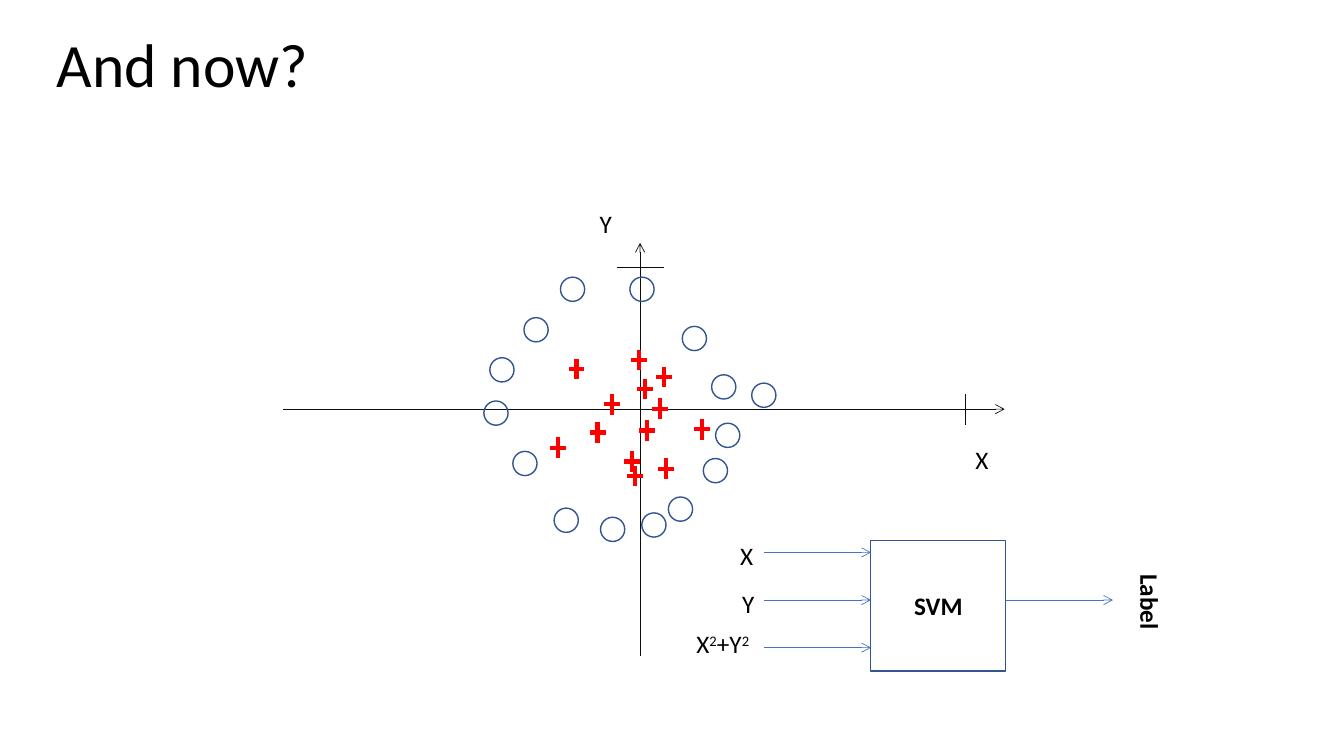
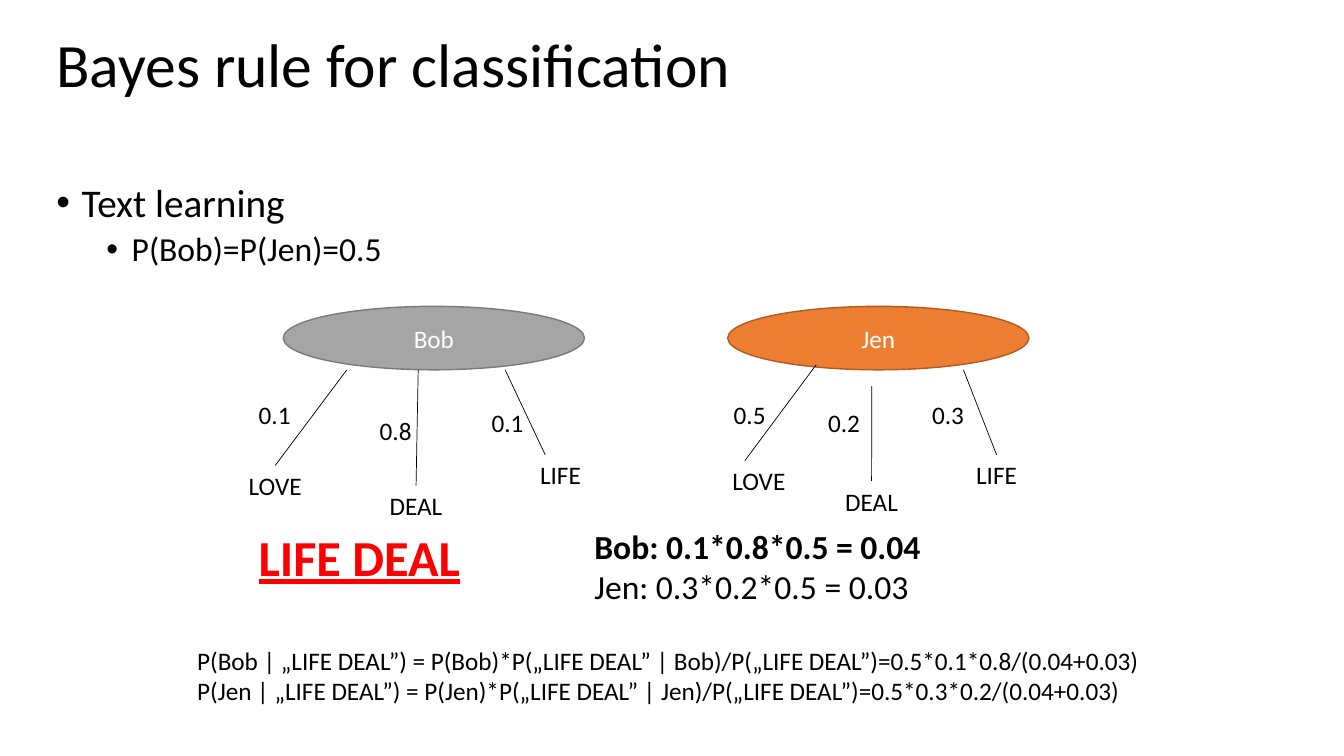
from lxml import etree
from pptx import Presentation
from pptx.dml.color import RGBColor
from pptx.enum.shapes import MSO_CONNECTOR as LINK, MSO_SHAPE as SHAPE
from pptx.enum.text import MSO_ANCHOR as ANCHOR, PP_ALIGN as ALIGN
from pptx.oxml.ns import qn
from pptx.util import Cm, Pt

FONT = "Calibri"
COLORS = {
    "ink": "000000",
    "axis": "0D0D0D",
    "red": "FF0000",
    "outline": "325491",
    "arrow": "4472C4",
    "white": "FFFFFF",
    "gray": "A5A5A5",
    "gray_edge": "7A7A7A",
    "orange": "ED7D31",
    "orange_edge": "AF5C24",
}

PLUSES = [
    (16.64, 10.3), (15.93, 11.63), (14.07, 11.28), (17.7, 10.82), (16.1, 9.07),
    (16.79, 11.81), (14.53, 9.3), (15.42, 10.19), (15.06, 10.9), (16.26, 9.8),
    (16.31, 10.85), (16.74, 9.5), (16, 11.99),
]
CIRCLES = [
    (16.18, 7.29), (12.65, 9.32), (14.43, 7.29), (17.15, 12.83), (18.24, 9.75),
    (14.27, 13.11), (13.23, 11.68), (17.5, 8.53), (18.03, 11.86), (12.5, 10.41),
    (13.51, 8.31), (19.25, 9.96), (18.34, 10.97), (16.48, 13.23), (15.44, 13.34),
]
BOB_BRANCHES = [
    ("LOVE", (5.54, 11.73), (8.74, 9.32), None, "0.1", (6.27, 9.93)),
    ("DEAL", (9.09, 12.24), (10.54, 9.32), None, "0.8", (9.32, 10.34)),
    ("LIFE", (12.73, 11.46), (12.73, 9.32), 13.74, "0.1", (12.14, 10.13)),
]
JEN_BRANCHES = [
    ("LOVE", (17.73, 11.61), (20.57, 9.19), 18.77, "0.5", (18.24, 9.93)),
    ("DEAL", (20.57, 12.12), (21.97, 9.73), None, "0.2", (20.62, 10.13)),
    ("LIFE", (23.72, 11.46), (24.28, 9.32), None, "0.3", (23.24, 9.93)),
]


def rgb(name):
    return RGBColor.from_string(COLORS[name])


def write(para, text, size=18, color="ink", bold=False, underline=False,
          raised=False, align=ALIGN.LEFT):
    para.alignment = align
    span = para.add_run()
    span.text = text
    span.font.name = FONT
    span.font.size = Pt(size)
    span.font.bold = bold
    span.font.underline = underline
    span.font.color.rgb = rgb(color)
    if raised:
        span.font._element.set("baseline", "30000")


def add_page(deck, title):
    page = deck.slides.add_slide(deck.slide_layouts[5])
    box = page.shapes.title
    box.left, box.top, box.width, box.height = Cm(1.17), Cm(0.38), Cm(25.98), Cm(2.64)
    box.text_frame.vertical_anchor = ANCHOR.MIDDLE
    para = box.text_frame.paragraphs[0]
    para.line_spacing = 0.9
    write(para, title, size=44)
    return page


def add_box(page, left, top, width, height=1.02, wrap=True):
    box = page.shapes.add_textbox(Cm(left), Cm(top), Cm(width), Cm(height))
    box.text_frame.word_wrap = wrap
    return box


def add_label(page, text, left, top, width, height=1.02, **style):
    box = add_box(page, left, top, width, height)
    write(box.text_frame.paragraphs[0], text, **style)
    return box


def add_lines(page, lines, left, top, width, height, wrap=True):
    frame = add_box(page, left, top, width, height, wrap).text_frame
    for index, (text, style) in enumerate(lines):
        para = frame.add_paragraph() if index else frame.paragraphs[0]
        write(para, text, **style)


def add_line(shapes, start, end, color="axis", weight=0.5, arrow=False):
    line = shapes.add_connector(LINK.STRAIGHT, *map(Cm, start + end))
    line.line.color.rgb = rgb(color)
    line.line.width = Pt(weight)
    etree.SubElement(line._element.spPr, qn("a:effectLst"))
    if arrow:
        etree.SubElement(line.line._get_or_add_ln(), qn("a:tailEnd"), type="arrow")
    return line


def add_shape(page, kind, left, top, width, height, edge, fill=None, weight=1):
    shape = page.shapes.add_shape(kind, Cm(left), Cm(top), Cm(width), Cm(height))
    shape.shadow.inherit = False
    if fill:
        shape.fill.solid()
        shape.fill.fore_color.rgb = rgb(fill)
    else:
        shape.fill.background()
    shape.line.color.rgb = rgb(edge)
    shape.line.width = Pt(weight)
    shape.text_frame.vertical_anchor = ANCHOR.MIDDLE
    return shape


def add_plus(page, x, y):
    shapes = page.shapes.add_group_shape().shapes
    for dx, dy in ((0, 0.26), (0.2, 0)):
        add_line(shapes, (x - dx, y - dy), (x + dx, y + dy), "red", 3)


def add_circle(page, x, y, size=0.61):
    add_shape(page, SHAPE.OVAL, x - size / 2, y - size / 2, size, size, "outline")


def add_bullet(para, text, indent, size, level=0):
    para.level = level
    para.line_spacing = 0.9
    props = para._p.get_or_add_pPr()
    props.set("marL", str(Cm(indent)))
    props.set("indent", str(-Cm(0.64)))
    etree.SubElement(props, qn("a:buFont"), typeface="Arial")
    etree.SubElement(props, qn("a:buChar"), char="•")
    write(para, text, size=size)


def add_tree(page, name, left, fill, edge, branches):
    root = add_shape(page, SHAPE.OVAL, left, 7.72, 7.59, 1.6, edge, fill)
    write(root.text_frame.paragraphs[0], name, color="white", align=ALIGN.CENTER)
    width = 2.79
    for word, (word_left, word_top), start, end_x, chance, chance_at in branches:
        leaf = add_label(page, word, word_left, word_top, width, align=ALIGN.CENTER)
        end = (end_x or word_left + width / 2, word_top)
        line = add_line(page.shapes, start, end, "ink")
        if end_x is None:
            line.end_connect(leaf, 0)
        add_label(page, chance, *chance_at, 1.7)


def add_plot(page):
    add_line(page.shapes, (7.14, 10.31), (25.32, 10.31), arrow=True)
    add_line(page.shapes, (16.13, 16.54), (16.13, 6.12), arrow=True)
    add_line(page.shapes, (24.33, 9.93), (24.33, 10.72))
    add_line(page.shapes, (15.54, 6.73), (16.74, 6.73))
    add_label(page, "X", 24.33, 11.07, 2)
    add_label(page, "Y", 14.86, 5.13, 1.65)
    for center in PLUSES:
        add_plus(page, *center)
    for center in CIRCLES:
        add_circle(page, *center)


def add_classifier(page):
    left, width, reach = 21.95, 3.4, 2.7
    arrow_ys = [13.92 + 1.2 * row for row in range(3)]
    model = add_shape(page, SHAPE.RECTANGLE, left, 13.61, width, 3.3, "outline", weight=0.75)
    write(model.text_frame.paragraphs[0], "SVM", bold=True, align=ALIGN.CENTER)
    arrows = [(left - reach, y) for y in arrow_ys] + [(left + width, arrow_ys[1])]
    for x, y in arrows:
        add_line(page.shapes, (x, y), (x + reach, y), "arrow", arrow=True)
    add_label(page, "X", 17.5, 13.49, 1.73, align=ALIGN.RIGHT)
    add_label(page, "Y", 17.53, 14.71, 1.73, align=ALIGN.RIGHT)
    sum_box = add_box(page, 16.54, 15.72, 2.59)
    for text, raised in (("X", False), ("2", True), ("+Y", False), ("2", True)):
        write(sum_box.text_frame.paragraphs[0], text, raised=raised, align=ALIGN.RIGHT)
    label = add_label(page, "Label", 26.82, 14.66, 4.34, bold=True, align=ALIGN.CENTER)
    label.rotation = 90


def build_svm_page(deck):
    page = add_page(deck, "And now?")
    add_plot(page)
    add_classifier(page)


def build_bayes_page(deck):
    page = add_page(deck, "Bayes rule for classification")
    frame = add_box(page, 1.17, 4.5, 31.32, 12.67).text_frame
    add_bullet(frame.paragraphs[0], "Text learning", 0.64, 28)
    prior = frame.add_paragraph()
    prior.space_before = Pt(5)
    add_bullet(prior, "P(Bob)=P(Jen)=0.5", 1.9, 24, level=1)
    add_tree(page, "Bob", 7.14, "gray", "gray_edge", BOB_BRANCHES)
    add_tree(page, "Jen", 18.34, "orange", "orange_edge", JEN_BRANCHES)
    add_label(page, "LIFE DEAL", 6.27, 13.13, 6.45, 1.8,
              size=36, color="red", bold=True, underline=True)
    scores = [
        ("Bob: 0.1*0.8*0.5 = 0.04", {"size": 24, "bold": True}),
        ("Jen: 0.3*0.2*0.5 = 0.03", {"size": 24}),
    ]
    add_lines(page, scores, 14.73, 13.13, 8.79, 2.31, wrap=False)
    posteriors = [
        ("P(Bob | „LIFE DEAL”) = P(Bob)*P(„LIFE DEAL” | Bob)/P(„LIFE DEAL”)"
         "=0.5*0.1*0.8/(0.04+0.03)", {}),
        ("P(Jen | „LIFE DEAL”) = P(Jen)*P(„LIFE DEAL” | Jen)/P(„LIFE DEAL”)"
         "=0.5*0.3*0.2/(0.04+0.03)", {}),
    ]
    add_lines(page, posteriors, 4.72, 16.13, 24.61, 1.8)


def main():
    deck = Presentation()
    deck.slide_width, deck.slide_height = Cm(33.87), Cm(19.05)
    build_svm_page(deck)
    build_bayes_page(deck)
    deck.save("out.pptx")


if __name__ == "__main__":
    main()
